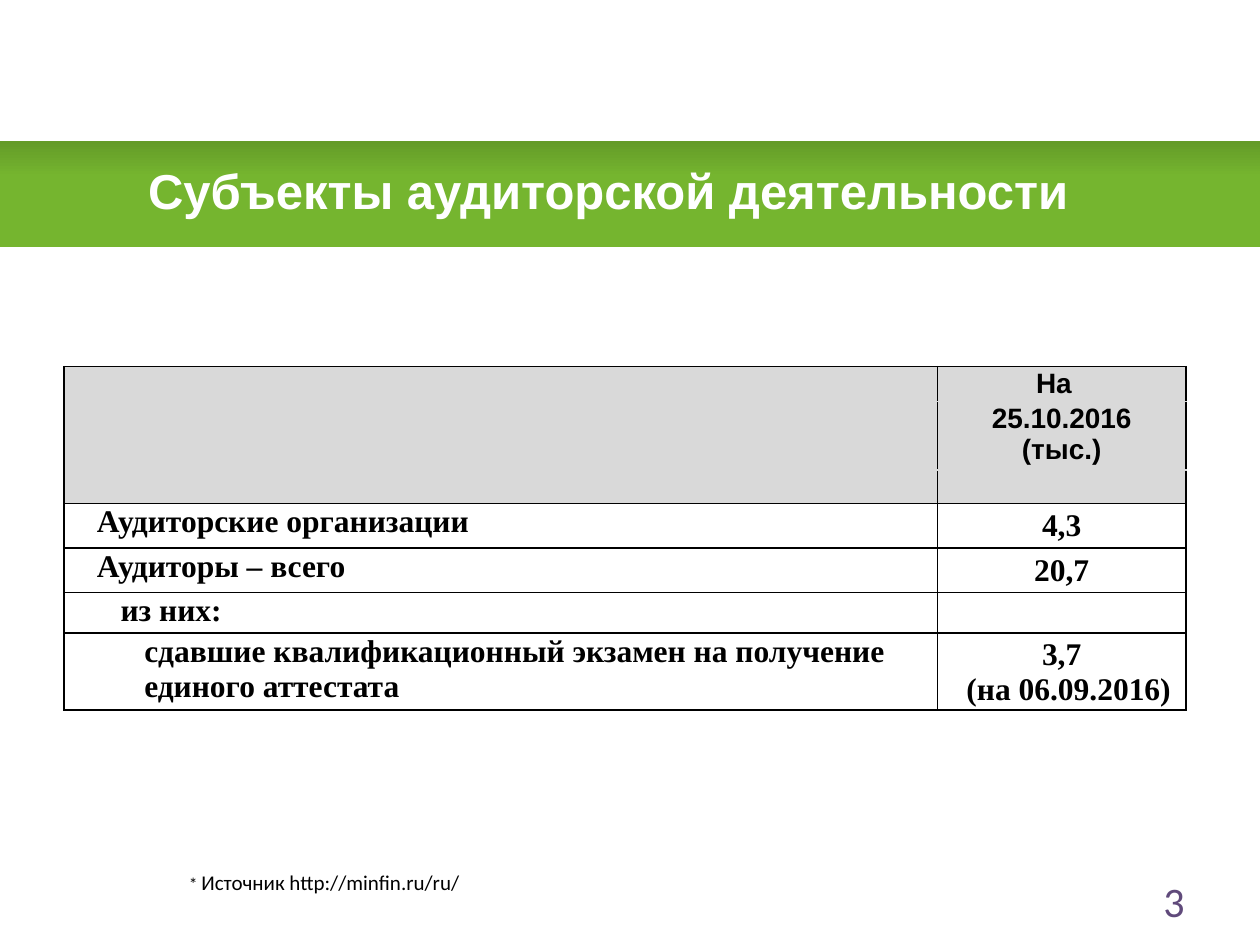
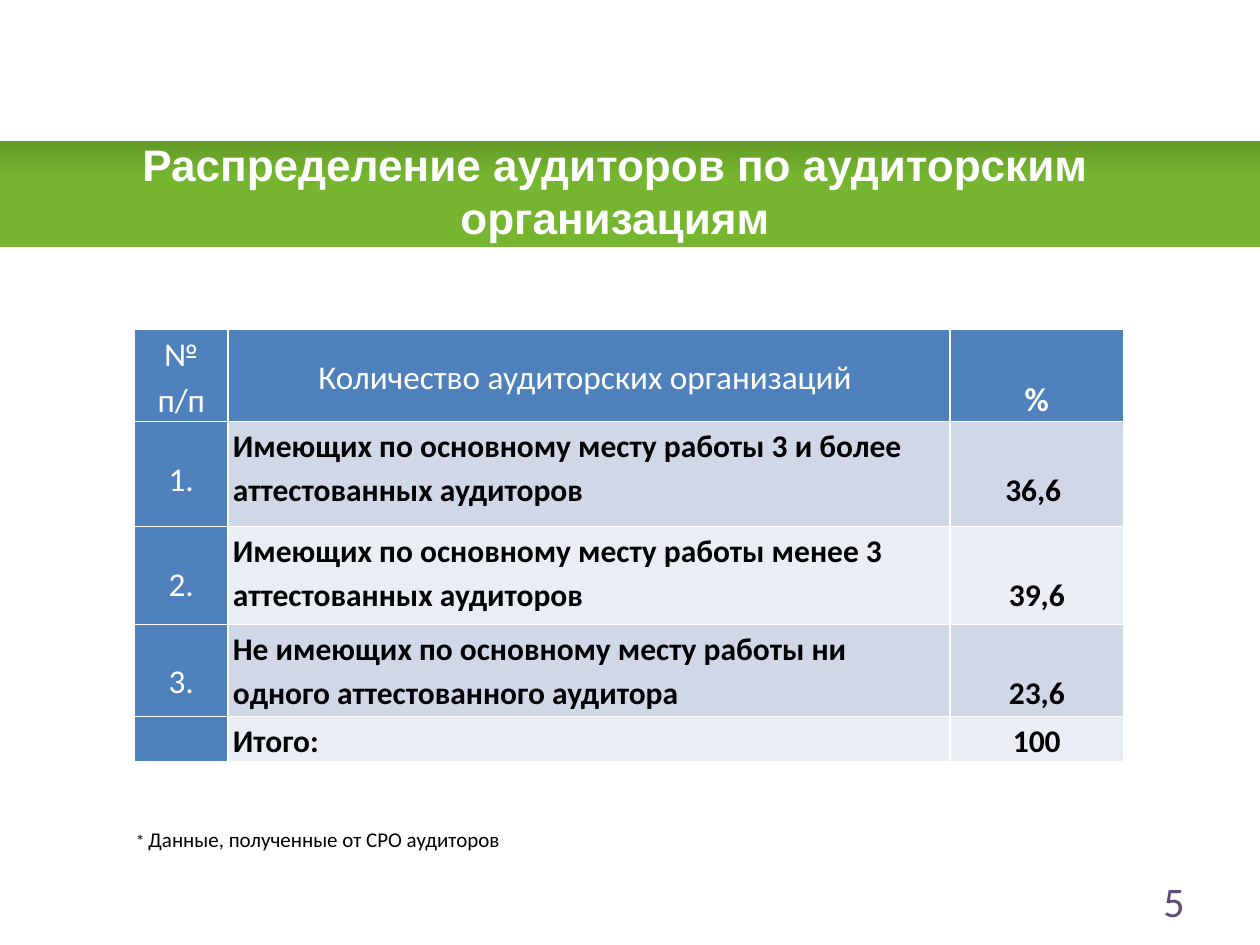
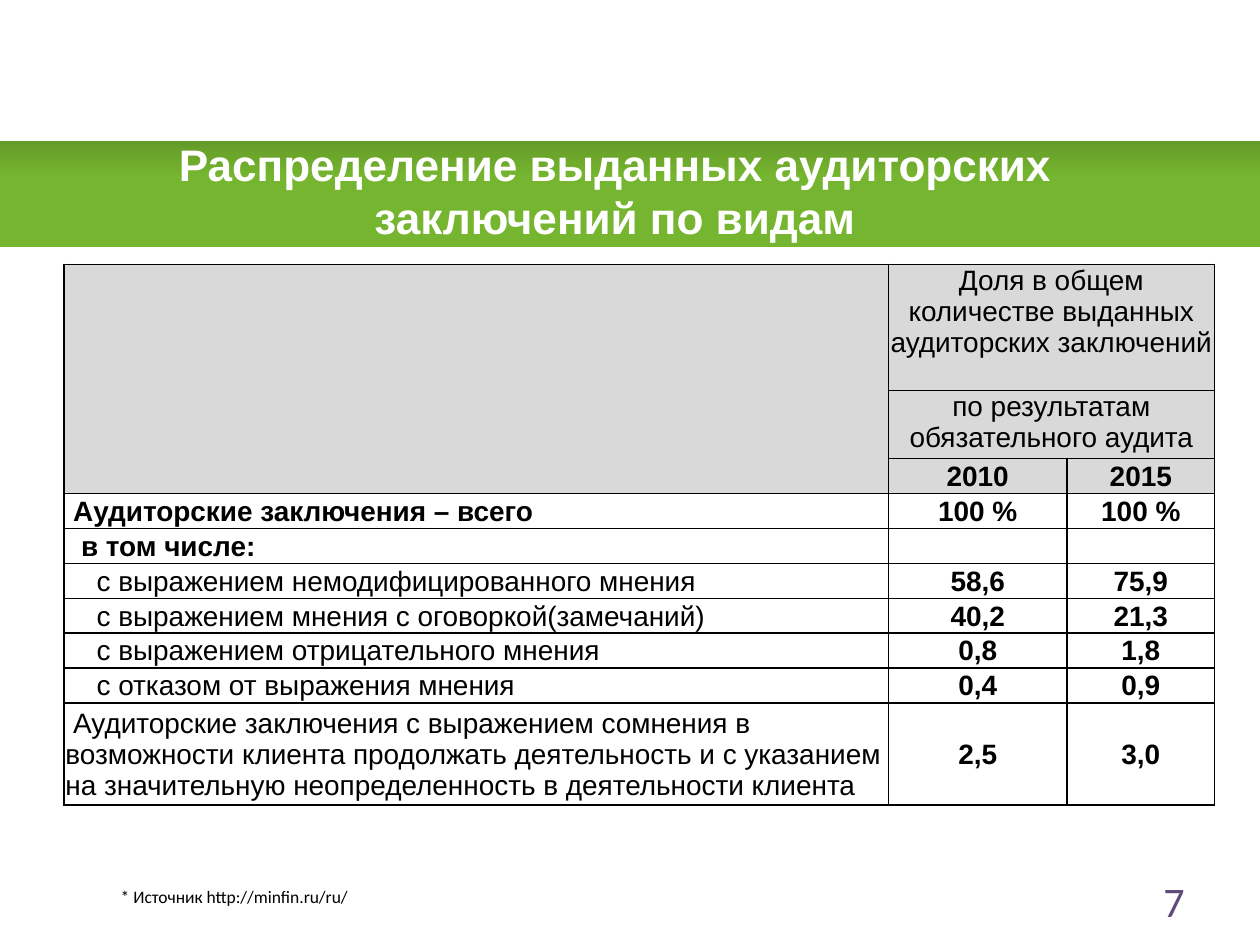
import pptx
import pptx.util
import pptx.dml.color
import pptx.enum.shapes
import pptx.enum.text
import pptx.oxml.ns
import lxml.etree

Pt = pptx.util.Pt
qn = pptx.oxml.ns.qn
ALIGN = pptx.enum.text.PP_ALIGN
ANCHOR = pptx.enum.text.MSO_ANCHOR
BLACK, WHITE, GREY, BLUE = "000000", "FFFFFF", "D9D9D9", "4F81BD"
SIDES = ["L", "R", "T", "B"]


def paint(hue):
    return pptx.dml.color.RGBColor.from_string(hue)


def write(frame, text, size, font, hue=BLACK, bold=False, align=ALIGN.CENTER, left=0, first=0, spacing=None):
    frame.text = text
    for paragraph in frame.paragraphs:
        paragraph.alignment = align
        if spacing:
            paragraph.line_spacing = spacing
        if left or first:
            properties = paragraph._p.get_or_add_pPr()
            properties.set("marL", str(Pt(left)))
            properties.set("indent", str(Pt(first)))
        for run in paragraph.runs:
            run.font.size = Pt(size)
            run.font.name = font
            run.font.bold = bold
            run.font.color.rgb = paint(hue)


pages = [
    {"title": "Субъекты аудиторской деятельности ", "title_size": 28, "number": "3",
     "source": "Источник http://minfin.ru/ru/", "source_size": 12, "source_at": (100.8, 493.2),
     "table_at": (36.72, 209.5), "columns": [499, 142],
     "rows": [20, 36.5, 19, 25.5, 25.5, 23.2, 43], "border": BLACK, "margins": (0.72, 0.72)},
    {"title": "Распределение аудиторов по аудиторским организациям", "title_size": 25.2, "number": "5",
     "source": "Данные, полученные от СРО аудиторов", "source_size": 12, "source_at": (70.56, 468.7),
     "table_at": (76.9, 188), "columns": [53.3, 412.6, 99.4],
     "rows": [53, 60, 56, 52.5, 25.8], "border": WHITE, "margins": (2.88, 0)},
    {"title": "Распределение выданных аудиторских заключений по видам", "title_size": 25.2, "number": "7",
     "source": "Источник http://minfin.ru/ru/", "source_size": 10, "source_at": (61.9, 502.6),
     "table_at": (36.72, 151), "columns": [470.9, 102.2, 84.2],
     "rows": [72, 36.4, 18.7, 20, 19.3, 19, 19, 19, 19, 54.3], "border": BLACK, "margins": (0.72, 0.72)},
]

presentation = pptx.Presentation()
presentation.slide_width = Pt(720)
presentation.slide_height = Pt(540)
tables = []

for page in pages:
    slide = presentation.slides.add_slide(presentation.slide_layouts[6])

    band = slide.shapes.add_shape(pptx.enum.shapes.MSO_SHAPE.RECTANGLE, 0, Pt(80.6), Pt(720), Pt(60.5))
    band.shadow.inherit = False
    band.line.fill.background()
    band.fill.gradient()
    band.fill.gradient_angle = 270
    for stop, (position, hue) in zip(band.fill.gradient_stops, [(0, "649B28"), (0.34, "75B52F")]):
        stop.position = position
        stop.color.rgb = paint(hue)

    title = slide.shapes.add_textbox(Pt(27.4), Pt(83.5), Pt(648), Pt(50.4)).text_frame
    title.word_wrap = True
    title.vertical_anchor = ANCHOR.MIDDLE
    write(title, page["title"], page["title_size"], "Arial", WHITE, True)

    columns, rows = page["columns"], page["rows"]
    left, top = page["table_at"]
    table = slide.shapes.add_table(len(rows), len(columns), Pt(left), Pt(top),
                                   Pt(sum(columns)), Pt(sum(rows))).table
    table.first_row = False
    table.horz_banding = False
    for column, width in zip(table.columns, columns):
        column.width = Pt(width)
    for row, height in zip(table.rows, rows):
        row.height = Pt(height)
    side_margin, top_margin = page["margins"]
    for cell in table.iter_cells():
        cell.margin_left = cell.margin_right = Pt(side_margin)
        cell.margin_top = Pt(top_margin)
        cell.margin_bottom = 0
        lxml.etree.SubElement(cell.text_frame.paragraphs[0]._p, qn("a:endParaRPr"), sz="1000")
        for side in SIDES:
            edge = lxml.etree.SubElement(cell._tc.get_or_add_tcPr(), qn("a:ln" + side), w=str(Pt(1)))
            ink = lxml.etree.SubElement(edge, qn("a:solidFill"))
            lxml.etree.SubElement(ink, qn("a:srgbClr"), val=page["border"])
        cell.fill.solid()
        cell.fill.fore_color.rgb = paint(WHITE)
    tables.append(table)

    left, top = page["source_at"]
    source = slide.shapes.add_textbox(Pt(left), Pt(top), Pt(431), Pt(21.6)).text_frame
    source.word_wrap = True
    write(source, "* ", 10, "Calibri", align=ALIGN.LEFT)
    origin = source.paragraphs[0].add_run()
    origin.text = page["source"]
    origin.font.size = Pt(page["source_size"])
    origin.font.name = "Calibri"
    origin.font.color.rgb = paint(BLACK)

    number = slide.shapes.add_textbox(Pt(516.2), Pt(500.4), Pt(167.8), Pt(28.8)).text_frame
    number.word_wrap = True
    number.vertical_anchor = ANCHOR.MIDDLE
    write(number, page["number"], 24, "Calibri", "604A7B", align=ALIGN.RIGHT)

subjects, distribution, opinions = tables

for table in (subjects, opinions):
    for row in range(3):
        for column in range(len(table.columns)):
            table.cell(row, column).fill.fore_color.rgb = paint(GREY)
    table.cell(0, 0).merge(table.cell(2, 0))

for row, text in enumerate(["На", "25.10.2016\n(тыс.)"]):
    write(subjects.cell(row, 1).text_frame, text, 16, "Arial", bold=True)
subjects.cell(0, 1).margin_right = Pt(9.6)
for row, side in [(0, "B"), (1, "T"), (1, "B"), (2, "T")]:
    edge = subjects.cell(row, 1)._tc.tcPr.find(qn("a:ln" + side))
    edge.find(".//" + qn("a:srgbClr")).set("val", GREY)

subject_rows = [
    ("Аудиторские организации", 18, "4,3"),
    ("Аудиторы – всего", 18, "20,7"),
    ("из них:", 31.5, ""),
    ("сдавшие квалификационный экзамен на получение\nединого аттестата", 45, "3,7\n(на 06.09.2016)"),
]
for row, (subject, indent, count) in enumerate(subject_rows, 3):
    write(subjects.cell(row, 0).text_frame, subject, 18, "Times New Roman", bold=True,
          align=ALIGN.LEFT, left=indent)
    if count:
        write(subjects.cell(row, 1).text_frame, count, 18, "Times New Roman", bold=True)
        subjects.cell(row, 1).vertical_anchor = ANCHOR.MIDDLE
exam_date = subjects.cell(6, 1).text_frame.paragraphs[1]
exam_date._p.get_or_add_pPr().set("marL", str(Pt(8)))
exam_date._p.get_or_add_pPr().set("indent", "0")

for column, heading in enumerate(["№ п/п", "Количество аудиторских организаций ", "%"]):
    cell = distribution.cell(0, column)
    cell.fill.fore_color.rgb = paint(BLUE)
    write(cell.text_frame, heading, 19, "Calibri", WHITE, heading == "%", spacing=1.15)
    cell.vertical_anchor = ANCHOR.TOP if heading == "%" else ANCHOR.MIDDLE
distribution.cell(0, 2).margin_top = Pt(26)

distribution_rows = [
    ("1.", "Имеющих по основному месту работы 3 и более аттестованных аудиторов", "36,6 "),
    ("2.", "Имеющих по основному месту работы менее 3 аттестованных аудиторов", "39,6"),
    ("3.", "Не имеющих по основному месту работы ни одного аттестованного аудитора", "23,6"),
    ("", "Итого:", "100"),
]
for row, (order, group, share) in enumerate(distribution_rows, 1):
    order_cell, group_cell, share_cell = distribution.rows[row].cells
    order_cell.fill.fore_color.rgb = paint(BLUE)
    for cell in (group_cell, share_cell):
        cell.fill.fore_color.rgb = paint("D0D8E8" if row % 2 else "E9EDF4")
    write(group_cell.text_frame, group, 18, "Calibri", bold=True, align=ALIGN.LEFT, spacing=1.15)
    write(share_cell.text_frame, share, 18, "Calibri", bold=True, spacing=1.15)
    if order:
        write(order_cell.text_frame, order, 19, "Calibri", WHITE, spacing=1.15)
        order_cell.margin_top = Pt(18.2)
        share_cell.margin_top = Pt(25.2)

for row, heading in enumerate(["Доля в общем количестве выданных аудиторских заключений",
                               "по результатам обязательного аудита"]):
    opinions.cell(row, 1).merge(opinions.cell(row, 2))
    write(opinions.cell(row, 1).text_frame, heading, 16, "Arial")

opinion_rows = [
    ("", 0, 0, "2010", "2015"),
    ("Аудиторские заключения – всего", 4.4, 0, "100 %", "100 %"),
    ("в том числе:", 8.9, 0, "", ""),
    ("с выражением немодифицированного мнения", 17.8, 0, "58,6", "75,9"),
    ("с выражением мнения с оговоркой(замечаний)", 17.8, 0, "40,2", "21,3"),
    ("с выражением отрицательного мнения", 17.8, 0, "0,8", "1,8"),
    ("с отказом от выражения мнения", 17.8, 0, "0,4", "0,9"),
    ("Аудиторские заключения с выражением сомнения в возможности клиента продолжать деятельность "
     "и с указанием на значительную неопределенность в деятельности клиента", 0, 4.4, "2,5", "3,0"),
]
for row, (opinion, indent, first, *shares) in enumerate(opinion_rows, 2):
    if opinion:
        write(opinions.cell(row, 0).text_frame, opinion, 16, "Arial", bold=row in (3, 4),
              align=ALIGN.LEFT, left=indent, first=first)
        opinions.cell(row, 0).vertical_anchor = ANCHOR.MIDDLE
    for column, share in enumerate(shares, 1):
        if share:
            write(opinions.cell(row, column).text_frame, share, 16, "Arial", bold=True)
            opinions.cell(row, column).vertical_anchor = ANCHOR.MIDDLE

presentation.save("out.pptx")
